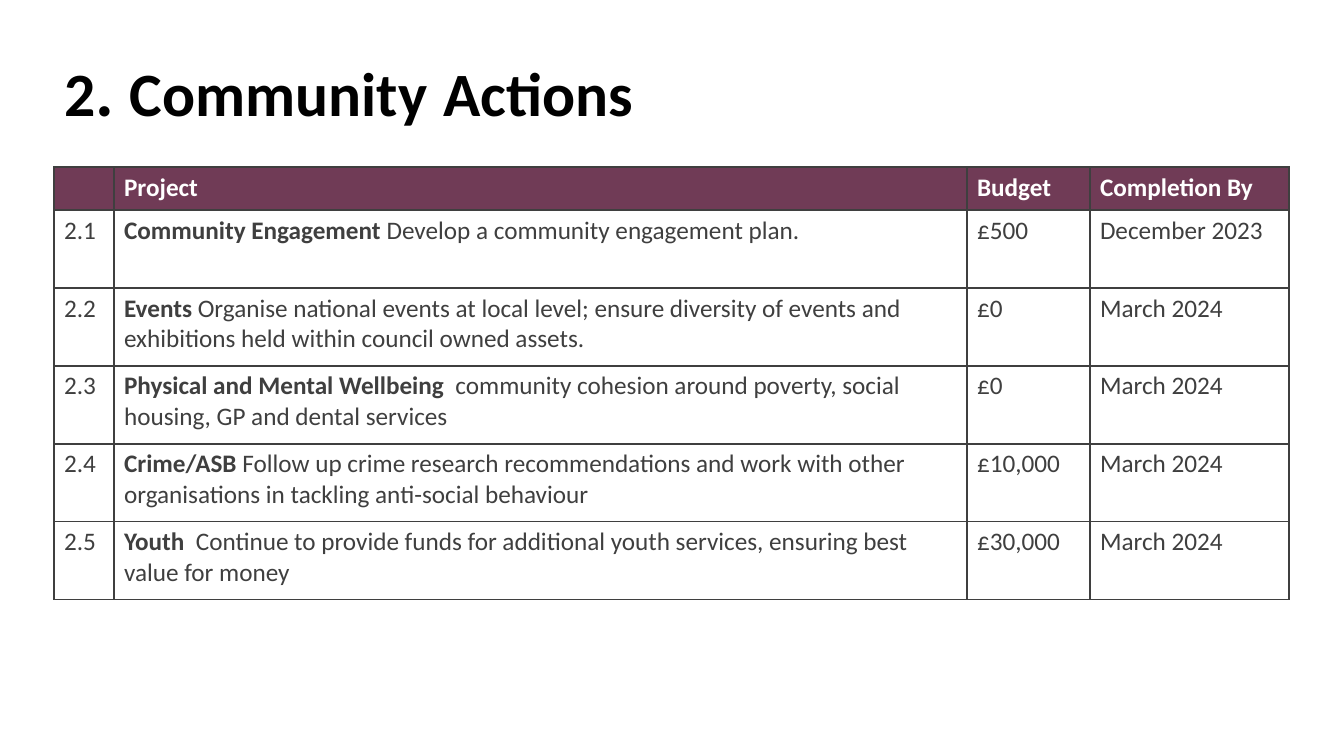
from lxml.etree import SubElement
from pptx import Presentation
from pptx.dml.color import RGBColor
from pptx.enum.text import MSO_ANCHOR, MSO_AUTO_SIZE, PP_ALIGN
from pptx.oxml import parse_xml
from pptx.oxml.ns import nsdecls, qn
from pptx.util import Pt

EMU_PER_PX = 12192000 / 1344
COLOURS = {"title": "000000", "header": "703B56", "header_text": "FFFFFF", "body": "3F3F3F"}
TITLE = [("2", 44), (". ", 50), ("Community", 44), (" ", 50), ("Actions", 44)]
HEADINGS = ["", "Project", "Budget", "Completion By"]
ACTIONS = [
    ("2.1", "Community Engagement ", "Develop a community engagement plan.",
     "£500", "December 2023"),
    ("2.2", "Events ", "Organise national events at local level; ensure diversity of events "
     "and exhibitions held within council owned assets.", "£0", "March 2024"),
    ("2.3", "Physical and Mental Wellbeing ", " community cohesion around poverty, social "
     "housing, GP and dental services", "£0", "March 2024"),
    ("2.4", "Crime/ASB ", "Follow up crime research recommendations and work with other "
     "organisations in tackling anti-social behaviour", "£10,000", "March 2024"),
    ("2.5", "Youth  ", "Continue to provide funds for additional youth services, ensuring best "
     "value for money", "£30,000", "March 2024"),
]
COLUMN_WIDTHS = [60, 853, 123, 199]
ROW_HEIGHTS = [43] + [78] * len(ACTIONS)


def px(length):
    return round(length * EMU_PER_PX)


def add_text(paragraph, text, size=18, colour="body", bold=False, font="Calibri"):
    run = paragraph.add_run()
    run.text = text
    run.font.name = font
    run.font.size = Pt(size)
    run.font.bold = bold
    run.font.color.rgb = RGBColor.from_string(COLOURS[colour])


class ActionSlide:
    def __init__(self, presentation):
        self.slide = presentation.slides.add_slide(presentation.slide_layouts[5])

    def title(self, parts, left, top, width, height):
        heading = self.slide.shapes.title
        heading.left, heading.top = px(left), px(top)
        heading.width, heading.height = px(width), px(height)
        frame = heading.text_frame
        frame.auto_size = MSO_AUTO_SIZE.NONE
        frame.word_wrap = True
        frame.vertical_anchor = MSO_ANCHOR.MIDDLE
        paragraph = frame.paragraphs[0]
        paragraph.alignment = PP_ALIGN.LEFT
        paragraph.line_spacing = 0.9
        for text, size in parts:
            add_text(paragraph, text, size=size, colour="title", bold=True)

    def table(self, left, top, widths, heights):
        frame = self.slide.shapes.add_table(len(heights), len(widths), px(left), px(top),
                                            px(sum(widths)), px(sum(heights)))
        grid = frame.table
        grid.first_row = grid.horz_banding = False
        for column, width in zip(grid.columns, widths):
            column.width = px(width)
        for row, height in zip(grid.rows, heights):
            row.height = px(height)
        return grid

    def cell(self, cell, runs, colour="body", fill=None):
        """Fill a cell with (text, bold) runs and draw its four borders."""
        for text, bold in runs:
            if text:
                add_text(cell.text_frame.paragraphs[0], text, colour=colour, bold=bold)
        if fill:
            cell.fill.solid()
            cell.fill.fore_color.rgb = RGBColor.from_string(COLOURS[fill])
        else:
            cell.fill.background()
        properties = cell._tc.get_or_add_tcPr()
        for position, side in enumerate(("lnL", "lnR", "lnT", "lnB")):
            border = parse_xml(f'<a:{side} {nsdecls("a")} w="{Pt(1)}"/>')
            line_fill = SubElement(border, qn("a:solidFill"))
            SubElement(line_fill, qn("a:srgbClr"), val=COLOURS["body"])
            properties.insert(position, border)


def main():
    presentation = Presentation()
    presentation.slide_width, presentation.slide_height = px(1344), px(756)
    page = ActionSlide(presentation)
    page.title(TITLE, 54, 21, 1198, 146)
    grid = page.table(54, 167, COLUMN_WIDTHS, ROW_HEIGHTS)
    for column, heading in enumerate(HEADINGS):
        page.cell(grid.cell(0, column), [(heading, True)], colour="header_text", fill="header")
    for row, (number, project, details, budget, deadline) in enumerate(ACTIONS, start=1):
        contents = [[(number, False)], [(project, True), (details, False)],
                    [(budget, False)], [(deadline, False)]]
        for column, runs in enumerate(contents):
            page.cell(grid.cell(row, column), runs)
    presentation.save("out.pptx")


if __name__ == "__main__":
    main()
